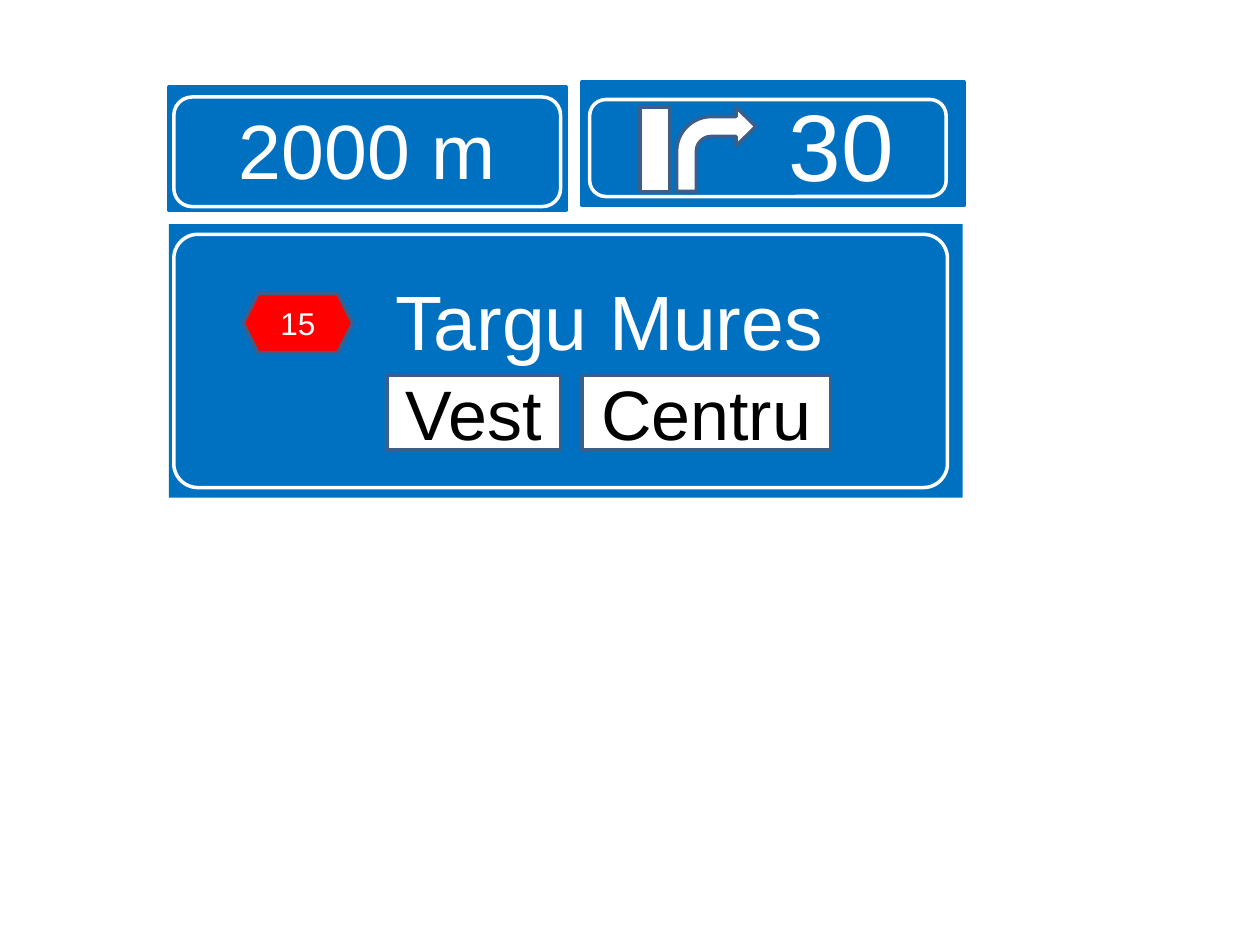
import pptx
import pptx.dml.color
import pptx.enum.shapes
import pptx.enum.text
import pptx.util

Inches = pptx.util.Inches
Pt = pptx.util.Pt
SHAPE = pptx.enum.shapes.MSO_SHAPE
ANCHOR = pptx.enum.text.MSO_ANCHOR

COLORS = {
    "sign": "0070C0",
    "white": "FFFFFF",
    "black": "000000",
    "edge": "3A5F8C",
    "road": "FF0000",
}


def rgb(name):
    return pptx.dml.color.RGBColor.from_string(COLORS[name])


def add_shape(slide, kind, box, fill=None, line=None, adjustments=()):
    """Add a shape in box (left, top, width, height in inches)."""
    shape = slide.shapes.add_shape(kind, *(Inches(length) for length in box))
    shape.shadow.inherit = False
    for index, value in enumerate(adjustments):
        shape.adjustments[index] = value
    if fill:
        shape.fill.solid()
        shape.fill.fore_color.rgb = rgb(fill)
    else:
        shape.fill.background()
    if line:
        shape.line.color.rgb = rgb(line)
        shape.line.width = Pt(2)
    else:
        shape.line.fill.background()
    return shape


def write(shape, text, size, color="white", anchor=ANCHOR.MIDDLE):
    frame = shape.text_frame
    frame.word_wrap = True
    frame.vertical_anchor = anchor
    frame.text = text
    paragraph = frame.paragraphs[0]
    paragraph.alignment = pptx.enum.text.PP_ALIGN.CENTER
    font = paragraph.runs[0].font
    font.name = "Arial"
    font.size = Pt(size)
    font.color.rgb = rgb(color)
    return frame


def add_border(slide, box, radius=0.1667):
    add_shape(slide, SHAPE.ROUNDED_RECTANGLE, box, line="white", adjustments=[radius])


def distance_sign(slide, left, top, width, height):
    panel = add_shape(slide, SHAPE.ROUNDED_RECTANGLE, (left, top, width, height),
                      "sign", "sign", [0])
    write(panel, "2000 m", 44)
    add_border(slide, (left + 0.04, top + 0.08, width - 0.08, height - 0.11))


def exit_sign(slide, left, top, width, height):
    panel = add_shape(slide, SHAPE.ROUNDED_RECTANGLE, (left, top, width, height),
                      "sign", "sign", [0])
    write(panel, "30", 54).margin_left = Inches(1.18)
    add_shape(slide, SHAPE.RECTANGLE, (left + 0.46, top + 0.2, 0.24, 0.67),
              "white", "edge")
    add_shape(slide, SHAPE.BENT_ARROW, (left + 0.75, top + 0.2, 0.63, 0.67),
              "white", "edge", [0.25, 0.245, 0.25, 0.438])
    add_border(slide, (left + 0.06, top + 0.14, width - 0.2, height - 0.21))


def destination_sign(slide, left, top, width, height):
    panel = add_shape(slide, SHAPE.RECTANGLE, (left, top, width, height), "sign")
    frame = write(panel, "Targu Mures", 44, anchor=ANCHOR.TOP)
    frame.margin_left = Inches(0.79)
    frame.margin_top = Inches(0.39)
    frame.margin_bottom = Inches(0.24)
    frame.paragraphs[0].space_before = Pt(4)
    add_border(slide, (left + 0.04, top + 0.08, width - 0.16, height - 0.16), 0.095)

    road = add_shape(slide, SHAPE.HEXAGON, (left + 0.59, top + 0.55, 0.87, 0.47),
                     "road", "edge")
    write(road, "15", 18)
    for text, offset, plate_width in (("Vest", 1.73, 1.38), ("Centru", 3.28, 1.97)):
        plate = add_shape(slide, SHAPE.RECTANGLE,
                          (left + offset, top + 1.2, plate_width, 0.59),
                          "white", "edge")
        write(plate, text, 40, "black")


def main():
    presentation = pptx.Presentation()
    presentation.slide_width = Inches(10)
    presentation.slide_height = Inches(7.5)
    slide = presentation.slides.add_slide(presentation.slide_layouts[6])
    distance_sign(slide, 1.34, 0.69, 3.15, 0.98)
    exit_sign(slide, 4.62, 0.65, 3.03, 0.98)
    destination_sign(slide, 1.34, 1.78, 6.3, 2.17)
    presentation.save("out.pptx")


if __name__ == "__main__":
    main()
